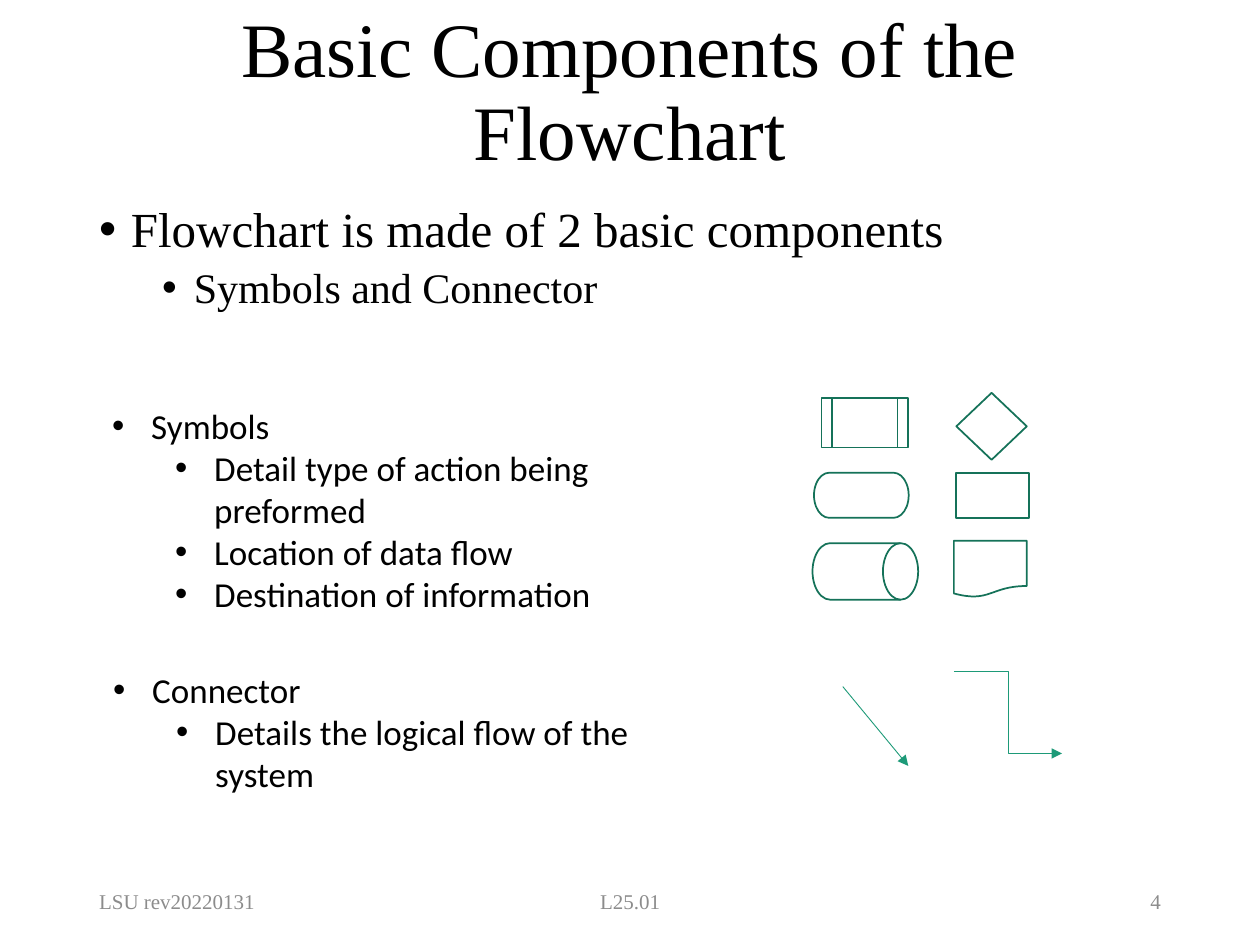
"""Build the slide on the basic components of a flowchart."""
from typing import NamedTuple

from lxml import etree
from pptx import Presentation
from pptx import util as u
from pptx.dml.color import RGBColor
from pptx.enum import shapes, text
from pptx.oxml.ns import qn

SERIF, SANS = "Times New Roman", "Calibri"
BLACK, GREY, WHITE = "000000", "8C8C8C", "FFFFFF"
OUTLINE, ARROW = "157259", "1D9A78"
Shape, Align, Anchor = shapes.MSO_SHAPE, text.PP_ALIGN, text.MSO_ANCHOR
Link = shapes.MSO_CONNECTOR


class Area(NamedTuple):
    left: float
    top: float
    width: float
    height: float


class Line(NamedTuple):
    words: str
    size: int
    level: int = 0
    before: int = 0


class Symbol(NamedTuple):
    kind: Shape
    area: Area


class Arrow(NamedTuple):
    kind: Link
    start: tuple[float, float]
    end: tuple[float, float]


FOOTERS = [
    ("LSU rev20220131", 1.75, 5.72, Align.LEFT),
    ("L25.01", 8.41, 8.59, Align.CENTER),
    ("4", 17.93, 5.72, Align.RIGHT),
]
ARROWS = [
    Arrow(Link.ELBOW, (19.23, 13.54), (21.41, 15.19)),
    Arrow(Link.STRAIGHT, (16.99, 13.84), (18.31, 15.44)),
]
SYMBOLS = [
    Symbol(Shape.FLOWCHART_DOCUMENT, Area(19.23, 10.9, 1.47, 1.14)),
    Symbol(Shape.FLOWCHART_DIRECT_ACCESS_STORAGE, Area(16.38, 10.95, 2.13, 1.14)),
    Symbol(Shape.RECTANGLE, Area(19.28, 9.53, 1.47, 0.91)),
    Symbol(Shape.FLOWCHART_TERMINATOR, Area(16.41, 9.53, 1.91, 0.91)),
    Symbol(Shape.DIAMOND, Area(19.28, 7.92, 1.42, 1.35)),
    Symbol(Shape.FLOWCHART_PREDEFINED_PROCESS, Area(16.56, 8.03, 1.75, 0.99)),
]


def color(value: str) -> RGBColor:
    return RGBColor.from_string(value)


def add_bullet(para, hanging: float) -> None:
    properties = para._p.get_or_add_pPr()
    properties.set("marL", str(u.Cm(hanging + 1.27 * para.level)))
    properties.set("indent", str(-u.Cm(hanging)))
    etree.SubElement(properties, qn("a:buFont")).set("typeface", "Arial")
    etree.SubElement(properties, qn("a:buChar")).set("char", "•")


def add_text(page, area: Area, lines: list[Line], *, font: str = SERIF,
             ink: str = BLACK, align: Align = Align.LEFT,
             anchor: Anchor = Anchor.TOP, spacing: float = 1.0,
             hanging: float = 0) -> None:
    box = page.shapes.add_textbox(*map(u.Cm, area))
    frame = box.text_frame
    frame.word_wrap = True
    frame.vertical_anchor = anchor
    for index, line in enumerate(lines):
        para = frame.add_paragraph() if index else frame.paragraphs[0]
        para.alignment = align
        para.level = line.level
        para.line_spacing = spacing
        para.space_before = u.Pt(line.before)
        if hanging:
            add_bullet(para, hanging)
        span = para.add_run()
        span.text = line.words
        span.font.size = u.Pt(line.size)
        span.font.name = font
        span.font.color.rgb = color(ink)


def add_symbol(page, symbol: Symbol) -> None:
    shape = page.shapes.add_shape(symbol.kind, *map(u.Cm, symbol.area))
    shape.shadow.inherit = False
    shape.fill.solid()
    shape.fill.fore_color.rgb = color(WHITE)
    shape.line.color.rgb = color(OUTLINE)
    shape.line.width = u.Pt(1)


def add_arrow(page, arrow: Arrow) -> None:
    link = page.shapes.add_connector(arrow.kind, *map(u.Cm, arrow.start + arrow.end))
    link.line.color.rgb = color(ARROW)
    link.line.width = u.Pt(0.5)
    etree.SubElement(link.line._get_or_add_ln(), qn("a:tailEnd")).set("type", "triangle")
    etree.SubElement(link._element.spPr, qn("a:effectLst"))


def main() -> None:
    deck = Presentation()
    deck.slide_width, deck.slide_height = u.Cm(25.4), u.Cm(19.05)
    page = deck.slides.add_slide(deck.slide_layouts[6])
    add_text(page, Area(3.71, 0.05, 17.98, 3.68),
             [Line("Basic Components of the Flowchart", 44)],
             align=Align.CENTER, anchor=Anchor.MIDDLE, spacing=0.9)
    add_text(page, Area(1.75, 4.01, 21.89, 13.13),
             [Line("Flowchart is made of 2 basic components", 28),
              Line("Symbols and Connector", 24, level=1, before=5)],
             spacing=0.9, hanging=0.64)
    for words, left, width, align in FOOTERS:
        add_text(page, Area(left, 17.65, width, 1.02), [Line(words, 12)],
                 ink=GREY, align=align, anchor=Anchor.MIDDLE)
    for arrow in ARROWS:
        add_arrow(page, arrow)
    add_text(page, Area(2.03, 13.36, 12.78, 3.68),
             [Line("Connector", 20),
              Line("Details the logical flow of the system", 20, level=1)],
             font=SANS, hanging=0.79)
    for symbol in SYMBOLS:
        add_symbol(page, symbol)
    add_text(page, Area(2.01, 8.03, 12.83, 5.38),
             [Line("Symbols", 20),
              Line("Detail type of action being preformed", 20, level=1),
              Line("Location of data flow", 20, level=1),
              Line("Destination of information", 20, level=1)],
             font=SANS, hanging=0.79)
    deck.save("out.pptx")


if __name__ == "__main__":
    main()
